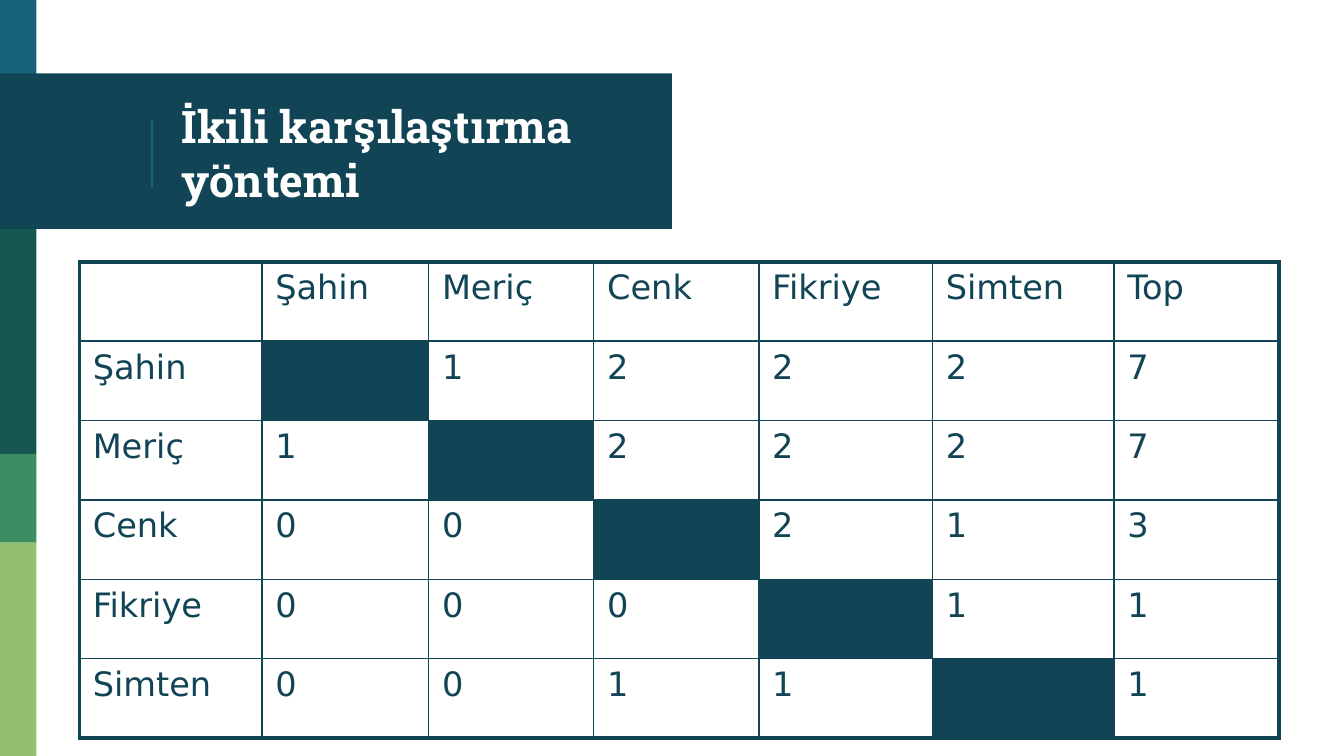
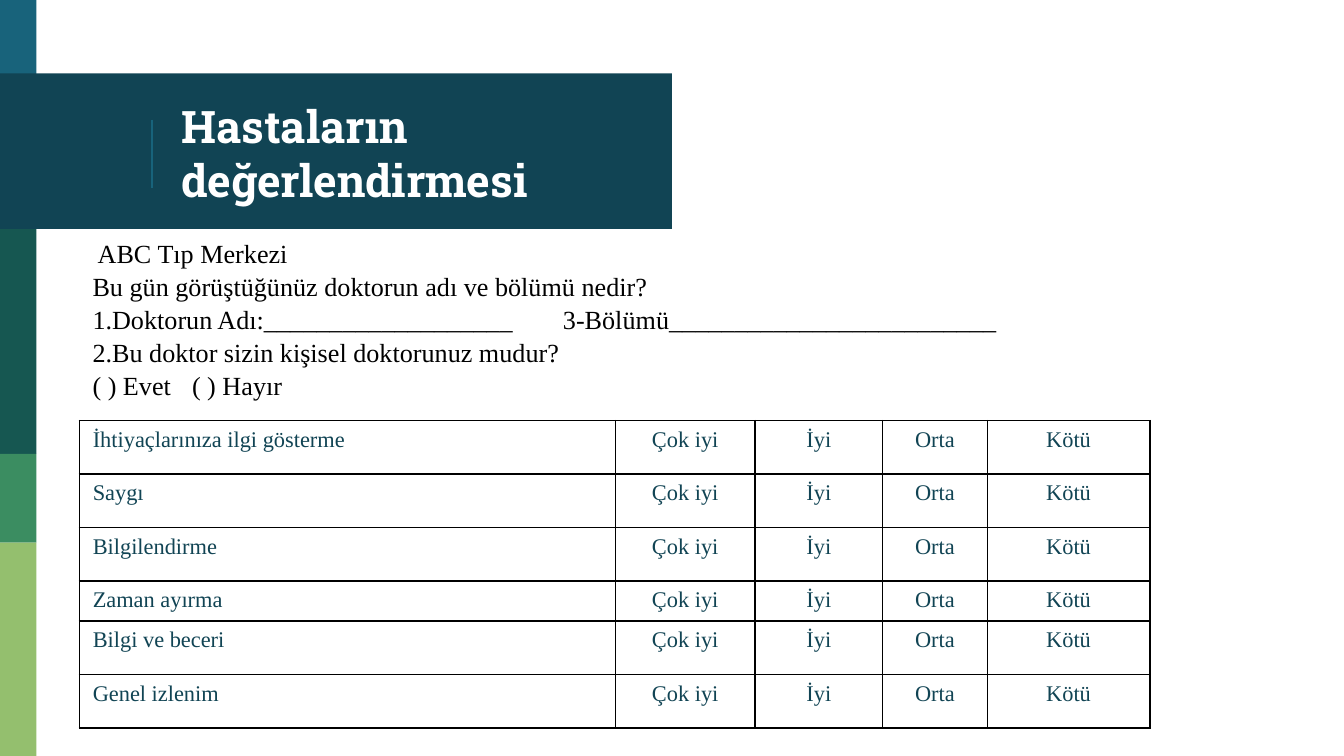
from lxml import etree
from pptx import Presentation
from pptx import util as u
from pptx.dml.color import RGBColor
from pptx.enum import shapes, text
from pptx.oxml import ns

NAVY = RGBColor(0x11, 0x44, 0x54)
BLUE = RGBColor(0x18, 0x63, 0x7B)
PINE = RGBColor(0x16, 0x57, 0x51)
GREEN = RGBColor(0x3B, 0x8D, 0x61)
LIME = RGBColor(0x94, 0xBF, 0x6E)
WHITE = RGBColor(0xFF, 0xFF, 0xFF)
BLACK = RGBColor(0, 0, 0)


def put(tf, txt, size=18, font="DejaVu Sans", color=NAVY, bold=False,
        align=text.PP_ALIGN.LEFT, spacing=1.0, tabs=(), numbers=()):
    for i, line in enumerate(txt.split("\n")):
        p = tf.paragraphs[0] if i == 0 else tf.add_paragraph()
        p.alignment = align
        p.line_spacing = spacing
        r = p.add_run()
        r.text = line
        r.font.size = u.Pt(size)
        r.font.name = font
        r.font.bold = bold
        r.font.color.rgb = color
        pPr = p._p.get_or_add_pPr()
        if i in numbers:
            pPr.set("marL", "0")
            pPr.set("indent", "0")
            etree.SubElement(pPr, ns.qn("a:buAutoNum"), type="arabicPeriod")
        if tabs:
            lst = etree.SubElement(pPr, ns.qn("a:tabLst"))
            for pos in tabs:
                etree.SubElement(lst, ns.qn("a:tab"), pos=str(u.Cm(pos)), algn="l")


def add_grid(s, left, top, cols, heights, rows, color, edge, aligns, **fmt):
    tbl = s.shapes.add_table(len(rows), len(cols), u.Cm(left), u.Cm(top),
                             u.Cm(sum(cols)), u.Cm(sum(heights))).table
    tbl.first_row = tbl.horz_banding = False
    for col, w in zip(tbl.columns, cols):
        col.width = u.Cm(w)
    for i, (row, h) in enumerate(zip(rows, heights)):
        tbl.rows[i].height = u.Cm(h)
        for j, value in enumerate(row):
            cell = tbl.cell(i, j)
            if value is None:
                cell.fill.solid()
                cell.fill.fore_color.rgb = NAVY
            else:
                cell.fill.background()
                if value != "":
                    put(cell.text_frame, str(value), align=aligns[j], **fmt)
            outer = {"L": j == 0, "R": j == len(cols) - 1,
                     "T": i == 0, "B": i == len(rows) - 1}
            for k, (side, is_outer) in enumerate(outer.items()):
                ln = etree.Element(ns.qn(f"a:ln{side}"),
                                   w=str(u.Pt(edge if is_outer else 1)))
                fill = etree.SubElement(ln, ns.qn("a:solidFill"))
                etree.SubElement(fill, ns.qn("a:srgbClr"), val=str(color))
                cell._tc.get_or_add_tcPr().insert(k, ln)


prs = Presentation()
prs.slide_width, prs.slide_height = u.Cm(25.4), u.Cm(14.29)
layout = prs.slide_layouts[5]
for ph in list(layout.placeholders):
    if ph.placeholder_format.type != shapes.PP_PLACEHOLDER.TITLE:
        ph.element.getparent().remove(ph.element)

titles = [("İkili karşılaştırma yöntemi", 9.32),
          ("Hastaların değerlendirmesi", 9.73)]
for title, width in titles:
    s = prs.slides.add_slide(layout)
    sp = s.shapes.title
    sp.left, sp.top, sp.width, sp.height = u.Cm(3.18), u.Cm(1.47), u.Cm(width), u.Cm(2.84)
    tf = sp.text_frame
    tf.word_wrap = True
    tf.auto_size = text.MSO_AUTO_SIZE.NONE
    tf.vertical_anchor = text.MSO_ANCHOR.MIDDLE
    tf.margin_left = tf.margin_right = tf.margin_top = tf.margin_bottom = u.Cm(0.25)
    put(tf, title, size=24, font="Roboto Slab", color=WHITE, bold=True)

ranking, survey = prs.slides

bands = [(0, 0.69, 1.47, BLUE), (1.39, 12.7, 2.94, NAVY), (4.33, 0.69, 4.25, PINE),
         (8.58, 0.69, 1.68, GREEN), (10.26, 0.69, 4.03, LIME)]
decor = []
for top, width, height, color in bands:
    sp = ranking.shapes.add_shape(shapes.MSO_SHAPE.RECTANGLE, 0, u.Cm(top),
                                  u.Cm(width), u.Cm(height))
    sp.shadow.inherit = False
    sp.fill.solid()
    sp.fill.fore_color.rgb = color
    sp.line.fill.background()
    decor.append(sp)
rule = ranking.shapes.add_connector(shapes.MSO_CONNECTOR.STRAIGHT, u.Cm(2.87), u.Cm(2.26),
                                    u.Cm(2.87), u.Cm(3.56))
rule.line.color.rgb = BLUE
rule.line.width = u.Pt(0.75)
etree.SubElement(rule.element.spPr, ns.qn("a:effectLst"))
decor.append(rule)
for sp in decor:
    layout.shapes.element.append(sp.element)

names = ["Şahin", "Meriç", "Cenk", "Fikriye", "Simten"]
scores = [[None, 1, 2, 2, 2, 7],
          [1, None, 2, 2, 2, 7],
          [0, 0, None, 2, 1, 3],
          [0, 0, 0, None, 1, 1],
          [0, 0, 1, 1, None, 1]]
rows = [["", *names, "Top"]] + [[name, *row] for name, row in zip(names, scores)]
add_grid(ranking, 1.5, 4.95, [3.45, 3.15, 3.12, 3.12, 3.28, 3.43, 3.12], [1.5] * 6,
         rows, NAVY, 2.25, [text.PP_ALIGN.LEFT] * 7)

questions = "\n".join([
    " ABC Tıp Merkezi",
    "Bu gün görüştüğünüz doktorun adı ve bölümü nedir?",
    "Doktorun Adı:" + "_" * 19 + " \t3-Bölümü" + "_" * 25,
    "Bu doktor sizin kişisel doktorunuz mudur?",
    "( ) Evet\t( ) Hayır"])
tf = survey.shapes.add_textbox(u.Cm(1.5), u.Cm(4.34), u.Cm(20.52), u.Cm(3.33)).text_frame
tf.word_wrap = True
tf.auto_size = text.MSO_AUTO_SIZE.SHAPE_TO_FIT_TEXT
put(tf, questions, size=14, font="Times New Roman", color=BLACK, spacing=1.05,
    align=text.PP_ALIGN.JUSTIFY, tabs=(1.27, 1.88), numbers=(2, 3))

criteria = ["İhtiyaçlarınıza ilgi gösterme", "Saygı", "Bilgilendirme",
            "Zaman ayırma", "Bilgi ve beceri", "Genel izlenim"]
rows = [[name, "Çok iyi", "İyi", "Orta", "Kötü"] for name in criteria]
add_grid(survey, 1.5, 7.95, [10.13, 2.64, 2.41, 1.98, 3.07],
         [1.01, 1.01, 1.01, 0.74, 1.01, 1.01], rows, BLACK, 1,
         [text.PP_ALIGN.JUSTIFY] + [text.PP_ALIGN.CENTER] * 4,
         size=12, font="Times New Roman")

prs.save("out.pptx")
